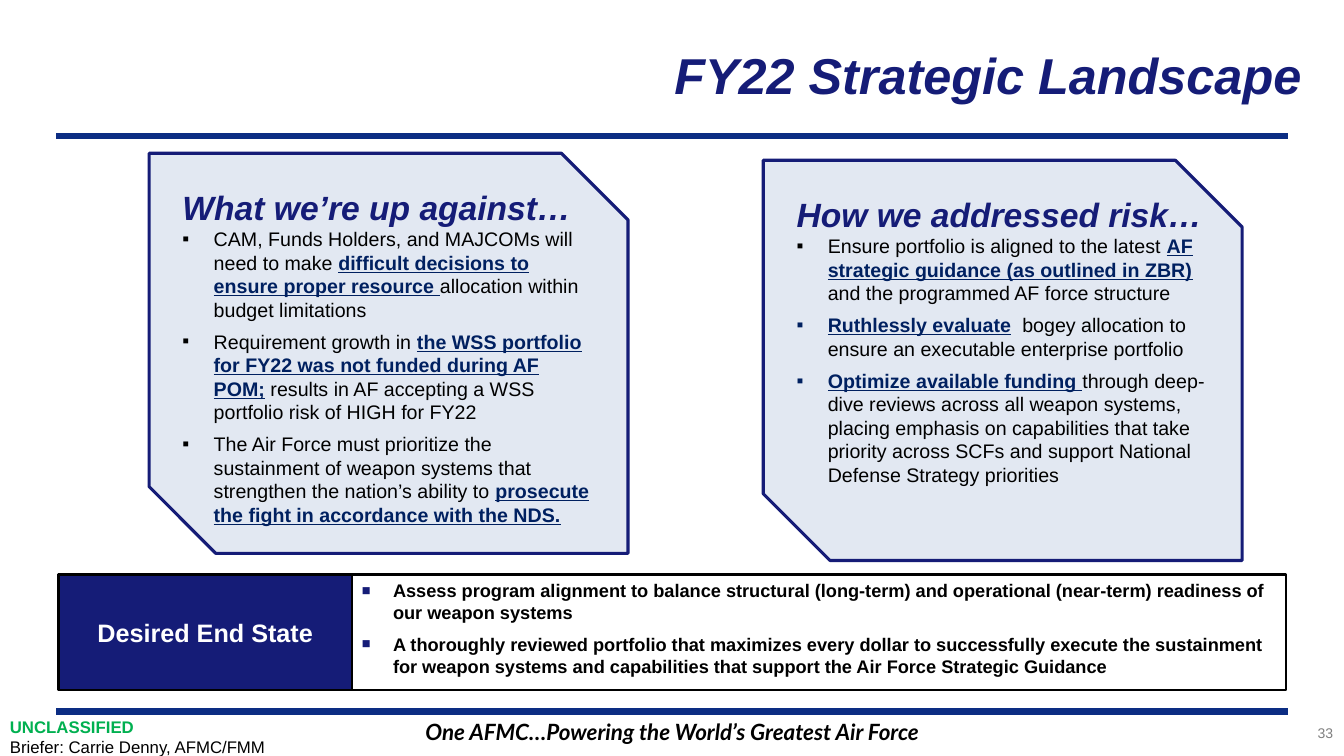
from dataclasses import dataclass

from lxml import etree
from pptx import Presentation
from pptx.dml import color
from pptx.enum import shapes, text
from pptx.oxml import ns
from pptx.util import Emu, Inches, Pt

WIDTH, HEIGHT = Inches(13.33), Inches(7.5)


@dataclass(frozen=True)
class Style:
    """Look of a run of text."""
    size: float
    color: str
    bold: bool = False
    italic: bool = False
    underline: bool = False
    font: str = "Arial"


class Theme:
    """Colours and type styles of the slide."""
    NAVY, RULE, PANEL, BLACK, WHITE = "151C77", "0C2D83", "E2E8F2", "000000", "FFFFFF"
    TITLE = Style(36, NAVY, True, True)
    HEADING = Style(24, NAVY, True, True)
    BODY = Style(14, BLACK)
    KEY = Style(14, "002060", True, underline=True)
    LABEL = Style(18, WHITE, True)
    GOAL = Style(13, BLACK, True)
    MOTTO = Style(16, BLACK, True, True, font="Lato")
    MARKING = Style(12, "00B050", True)
    BRIEFER = Style(12, BLACK)
    NUMBER = Style(10, "808080")


@dataclass(frozen=True)
class Bullet:
    """Look of a bullet mark, with an optional colour and size in percent."""
    mark: str
    color: str = ""
    percent: int = 100


PANEL_BULLET = Bullet("▪")
GOAL_BULLET = Bullet("■", Theme.NAVY, 80)

THREATS = [
    [("CAM, Funds Holders, and MAJCOMs will need to make ", Theme.BODY),
     ("difficult decisions to ensure proper resource ", Theme.KEY),
     ("allocation within budget limitations", Theme.BODY)],
    [("Requirement growth in ", Theme.BODY),
     ("the WSS portfolio for FY22 was not funded during AF POM;", Theme.KEY),
     (" results in AF accepting a WSS portfolio risk of HIGH for FY22", Theme.BODY)],
    [("The Air Force must prioritize the sustainment of weapon systems that "
      "strengthen the nation’s ability to ", Theme.BODY),
     ("prosecute the fight in accordance with the NDS.", Theme.KEY)],
]
RESPONSES = [
    [("Ensure portfolio is aligned to the latest ", Theme.BODY),
     ("AF strategic guidance (as outlined in ZBR)", Theme.KEY),
     (" and the programmed AF force structure", Theme.BODY)],
    [("Ruthlessly evaluate", Theme.KEY),
     ("  bogey allocation to ensure an executable enterprise portfolio", Theme.BODY)],
    [("Optimize available funding ", Theme.KEY),
     ("through deep-dive reviews across all weapon systems, placing emphasis on "
      "capabilities that take priority across SCFs and support National Defense "
      "Strategy priorities", Theme.BODY)],
]
GOALS = [
    "Assess program alignment to balance structural (long-term) and operational "
    "(near-term) readiness of our weapon systems",
    "A thoroughly reviewed portfolio that maximizes every dollar to successfully "
    "execute the sustainment for weapon systems and capabilities that support the "
    "Air Force Strategic Guidance",
]


def rgb(value):
    """Turn a hex string into a colour."""
    return color.RGBColor.from_string(value)


def area(left, top, width, height):
    """Turn percentages of the slide's size into lengths."""
    return [Emu(int(share * side / 100)) for share, side in
            zip((left, top, width, height), (WIDTH, HEIGHT) * 2)]


def add_bullet(paragraph, bullet):
    """Give a paragraph a hanging bullet."""
    properties = paragraph._p.get_or_add_pPr()
    properties.set("marL", str(Inches(0.31)))
    properties.set("indent", str(-Inches(0.31)))
    if bullet.color:
        fill = etree.SubElement(properties, ns.qn("a:buClr"))
        etree.SubElement(fill, ns.qn("a:srgbClr"), val=bullet.color)
    etree.SubElement(properties, ns.qn("a:buSzPct"), val=str(bullet.percent * 1000))
    etree.SubElement(properties, ns.qn("a:buFont"), typeface="Arial")
    etree.SubElement(properties, ns.qn("a:buChar"), char=bullet.mark)


def write(frame, paragraphs, align=text.PP_ALIGN.LEFT, bullet=None, before=0, after=0,
          start=0):
    """Write paragraphs of styled runs, with bullets from the start index on."""
    frame.word_wrap = True
    for index, runs in enumerate(paragraphs):
        paragraph = frame.add_paragraph() if index else frame.paragraphs[0]
        paragraph.alignment = align
        paragraph.space_before = Pt(before if index else 0)
        paragraph.space_after = Pt(after if index >= start else 0)
        if bullet and index >= start:
            add_bullet(paragraph, bullet)
        for words, style in runs:
            run = paragraph.add_run()
            run.text = words
            font = run.font
            font.name, font.size = style.font, Pt(style.size)
            font.bold, font.italic, font.underline = style.bold, style.italic, style.underline
            font.color.rgb = rgb(style.color)


def add_rule(slide, row):
    """Draw a thick rule across the slide."""
    left, top, width, _ = area(4.2, row, 91.67, 0)
    rule = slide.shapes.add_connector(shapes.MSO_CONNECTOR.STRAIGHT, left, top, left + width, top)
    rule.line.color.rgb = rgb(Theme.RULE)
    rule.line.width = Pt(4.5)
    etree.SubElement(rule._element.spPr, ns.qn("a:effectLst"))


def add_text(slide, place, paragraphs, align=text.PP_ALIGN.LEFT):
    """Add a plain text box."""
    write(slide.shapes.add_textbox(*area(*place)).text_frame, paragraphs, align)


def add_box(slide, kind, place, fill, line, weight, anchor=text.MSO_ANCHOR.TOP):
    """Add an outlined shape and return its text frame."""
    shape = slide.shapes.add_shape(kind, *area(*place))
    shape.shadow.inherit = False
    if fill:
        shape.fill.solid()
        shape.fill.fore_color.rgb = rgb(fill)
    else:
        shape.fill.background()
    shape.line.color.rgb = rgb(line)
    shape.line.width = Pt(weight)
    shape.text_frame.vertical_anchor = anchor
    return shape.text_frame


def add_panel(slide, left, top, heading, points):
    """Add a snipped panel with a heading and bulleted points."""
    frame = add_box(slide, shapes.MSO_SHAPE.SNIP_2_DIAG_RECTANGLE, (left, top, 35.63, 52.93),
                    Theme.PANEL, Theme.NAVY, 2.25)
    frame.margin_left = frame.margin_top = frame.margin_right = frame.margin_bottom = 0
    write(frame, [[(heading, Theme.HEADING)], *points], bullet=PANEL_BULLET, after=6, start=1)


def add_end_state(slide, left, top, label_width, goals_width, height):
    """Add the end state label and, beside it, its goals."""
    rectangle = shapes.MSO_SHAPE.RECTANGLE
    goals = add_box(slide, rectangle, (left + label_width, top, goals_width, height),
                    None, Theme.BLACK, 1.5)
    write(goals, [[(goal, Theme.GOAL)] for goal in GOALS], bullet=GOAL_BULLET, before=7)
    label = add_box(slide, rectangle, (left, top, label_width, height),
                    Theme.NAVY, Theme.BLACK, 1.5, text.MSO_ANCHOR.MIDDLE)
    write(label, [[("Desired End State", Theme.LABEL)]], text.PP_ALIGN.CENTER)


def main():
    """Build and save the slide."""
    presentation = Presentation()
    presentation.slide_width, presentation.slide_height = WIDTH, HEIGHT
    slide = presentation.slides.add_slide(presentation.slide_layouts[6])
    for row in (94.13, 18):
        add_rule(slide, row)
    add_text(slide, (4.2, 94.4, 91.67, 4.93),
             [[("One AFMC…Powering the World’s Greatest Air Force", Theme.MOTTO)]],
             text.PP_ALIGN.CENTER)
    add_text(slide, (19.43, 5.2, 78.17, 16.67), [[("FY22 Strategic Landscape", Theme.TITLE)]],
             text.PP_ALIGN.RIGHT)
    add_end_state(slide, 4.35, 76, 21.83, 69.54, 15.33)
    add_panel(slide, 56.79, 21.2, "How we addressed risk…", RESPONSES)
    add_panel(slide, 11.1, 20.27, "What we’re up against…", THREATS)
    add_text(slide, (87.4, 95.2, 12.53, 4.4), [[("33", Theme.NUMBER)]], text.PP_ALIGN.RIGHT)
    add_text(slide, (0, 94.13, 26.48, 6.67),
             [[("UNCLASSIFIED", Theme.MARKING)],
              [("Briefer: Carrie Denny, AFMC/FMM", Theme.BRIEFER)]])
    presentation.save("out.pptx")


if __name__ == "__main__":
    main()
